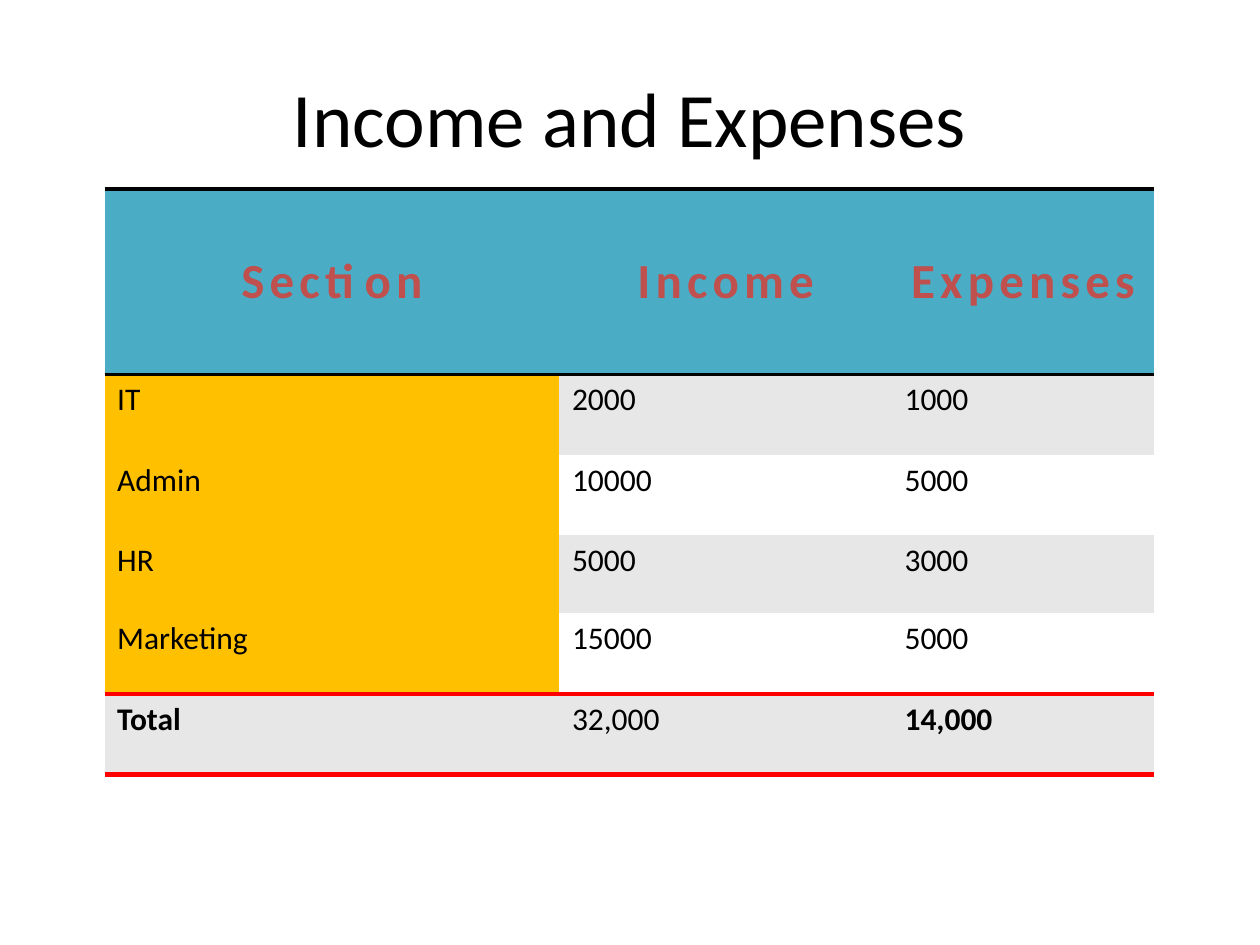
from lxml.etree import SubElement
from pptx import Presentation
from pptx.dml.color import RGBColor as RGB
from pptx.enum.text import MSO_ANCHOR as ANCHOR, PP_ALIGN as ALIGN
from pptx.oxml import parse_xml
from pptx.oxml.ns import nsdecls, qn
from pptx.util import Inches, Pt

COLORS = {
    "text": "000000",
    "page": "FFFFFF",
    "header": "4BACC6",
    "header_text": "C0504D",
    "section": "FFC000",
    "band": "E7E7E7",
    "total_rule": "FF0000",
}
FONT = "Calibri"
NO_STYLE = "{2D5ABB26-0587-4C30-8999-92F81FD0307C}"
COL_WIDTHS = [3.61, 2.64, 2.08]
ROW_HEIGHTS = [1.47, 0.64, 0.64, 0.62, 0.64, 0.64]
ROWS = [
    ["Section", "Income", "Expenses"],
    ["IT", "2000", "1000"],
    ["Admin", "10000", "5000"],
    ["HR", "5000", "3000"],
    ["Marketing", "15000", "5000"],
    ["Total", "32,000", "14,000"],
]
TOTAL = len(ROWS) - 1
BOLD_TOTALS = ("Total", "14,000")
RULES = {
    0: {"T": ("text", 2), "B": ("text", 2)},
    TOTAL - 1: {"B": ("total_rule", 3)},
    TOTAL: {"T": ("total_rule", 3), "B": ("total_rule", 3)},
}


def line_xml(tag, color, width):
    return parse_xml(
        f'<a:{tag} {nsdecls("a")} w="{Pt(width)}"><a:solidFill>'
        f'<a:srgbClr val="{COLORS[color]}"/></a:solidFill></a:{tag}>'
    )


def style_run(r, size, color="text", bold=False):
    r.font.name = FONT
    r.font.size = Pt(size)
    r.font.bold = bold
    r.font.color.rgb = RGB.from_string(COLORS[color])


def add_title(slide, box, text):
    tf = slide.shapes.add_textbox(*map(Inches, box)).text_frame
    tf.word_wrap = True
    tf.vertical_anchor = ANCHOR.MIDDLE
    p = tf.paragraphs[0]
    p.text = text
    p.alignment = ALIGN.CENTER
    style_run(p.runs[0], 44)


def cell_fill(row, col):
    if row == 0:
        return "header"
    if col == 0 and row < TOTAL:
        return "section"
    return "band" if row % 2 else "page"


def fill_cell(cell, row, col, text):
    cell.fill.solid()
    cell.fill.fore_color.rgb = RGB.from_string(COLORS[cell_fill(row, col)])
    p = cell.text_frame.paragraphs[0]
    p.text = text
    r = p.runs[0]
    if row == 0:
        cell.vertical_anchor = ANCHOR.MIDDLE
        p.alignment = ALIGN.CENTER
        style_run(r, 28, "header_text", True)
        rPr = r.font._element
        rPr.set("spc", "300")
        rPr.insert(0, line_xml("ln", "page", 2.25))
    else:
        style_run(r, 18, bold=row == TOTAL and text in BOLD_TOTALS)
    tcPr = cell._tc.get_or_add_tcPr()
    for i, (side, rule) in enumerate(RULES.get(row, {}).items()):
        tcPr.insert(i, line_xml(f"ln{side}", *rule))


def add_budget_table(slide, box):
    frame = slide.shapes.add_table(len(ROWS), len(COL_WIDTHS), *map(Inches, box))
    table = frame.table
    tblPr = table._tbl.tblPr
    for style in tblPr.findall(qn("a:tableStyleId")):
        tblPr.remove(style)
    SubElement(tblPr, qn("a:tableStyleId")).text = NO_STYLE
    for column, width in zip(table.columns, COL_WIDTHS):
        column.width = Inches(width)
    for i, (height, texts) in enumerate(zip(ROW_HEIGHTS, ROWS)):
        table.rows[i].height = Inches(height)
        for j, text in enumerate(texts):
            fill_cell(table.cell(i, j), i, j, text)


def main():
    prs = Presentation()
    prs.slide_width, prs.slide_height = Inches(10), Inches(7.5)
    slide = prs.slides.add_slide(prs.slide_layouts[6])
    add_title(slide, (0.5, 0.3, 9, 1.25), "Income and Expenses")
    add_budget_table(slide, (0.83, 1.5, sum(COL_WIDTHS), sum(ROW_HEIGHTS)))
    prs.save("out.pptx")


if __name__ == "__main__":
    main()
